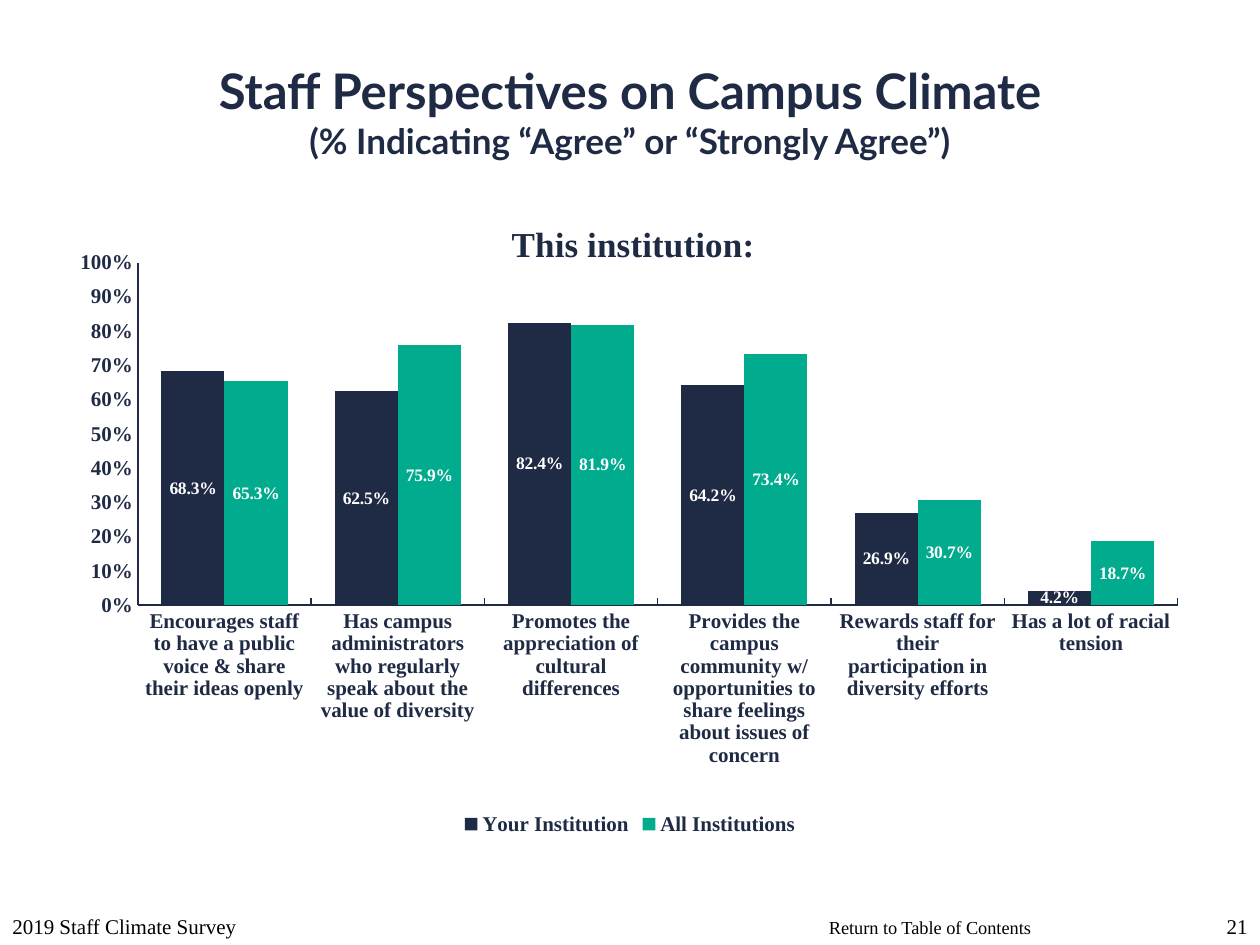
from dataclasses import dataclass

from lxml.etree import SubElement
from pptx import Presentation
from pptx.chart.data import CategoryChartData
from pptx.dml.color import RGBColor
from pptx.enum.chart import (XL_CHART_TYPE, XL_LABEL_POSITION,
                             XL_LEGEND_POSITION, XL_TICK_MARK)
from pptx.enum.text import MSO_ANCHOR, PP_ALIGN
from pptx.oxml import parse_xml
from pptx.oxml.ns import nsdecls, qn
from pptx.util import Cm, Pt


@dataclass(frozen=True)
class Theme:
    navy: RGBColor = RGBColor(0x1F, 0x2A, 0x44)
    green: RGBColor = RGBColor(0x00, 0xAB, 0x8E)
    white: RGBColor = RGBColor(0xFF, 0xFF, 0xFF)
    black: RGBColor = RGBColor(0x00, 0x00, 0x00)
    heading_face: str = "Lato"
    body_face: str = "Times New Roman"
    heading: float = 28
    subheading: float = 20
    chart_title: float = 20
    axis: float = 12
    label: float = 10
    footer: float = 12
    link: float = 10.5


THEME = Theme()

STATEMENTS = {
    "Encourages staff to have a public voice & share their ideas openly": (0.683, 0.653),
    "Has campus administrators who regularly speak about the value of diversity": (0.625, 0.759),
    "Promotes the appreciation of cultural differences": (0.824, 0.819),
    "Provides the campus community w/ opportunities to share feelings about issues of concern": (0.642, 0.734),
    "Rewards staff for their participation in diversity efforts": (0.269, 0.307),
    "Has a lot of racial tension": (0.042, 0.187),
}
GROUPS = {"Your Institution": THEME.navy, "All Institutions": THEME.green}


def style_font(font, size, color=THEME.navy, face=THEME.body_face, bold=True):
    font.name, font.size, font.bold = face, Pt(size), bold
    font.color.rgb = color


def add_run(paragraph, text, size, **style):
    run = paragraph.add_run()
    run.text = text
    style_font(run.font, size, **style)


def add_title(slide, heading, subheading):
    title = slide.shapes.title
    title.left, title.top, title.width, title.height = Cm(0), Cm(0.64), Cm(25.4), Cm(3.18)
    title.text_frame.vertical_anchor = MSO_ANCHOR.MIDDLE
    paragraph = title.text_frame.paragraphs[0]
    paragraph.alignment = PP_ALIGN.CENTER
    add_run(paragraph, heading, THEME.heading, face=THEME.heading_face)
    paragraph.add_line_break()
    add_run(paragraph, subheading, THEME.subheading, face=THEME.heading_face)


def add_footer(slide, text, left, top, width, height, size=THEME.footer,
               align=PP_ALIGN.LEFT, anchor=MSO_ANCHOR.BOTTOM, wrap=True):
    frame = slide.shapes.add_textbox(Cm(left), Cm(top), Cm(width), Cm(height)).text_frame
    frame.word_wrap = wrap
    frame.vertical_anchor = anchor
    paragraph = frame.paragraphs[0]
    paragraph.alignment = align
    add_run(paragraph, text, size, color=THEME.black, bold=False)


def place_in_chart(part, index, **values):
    """Give a chart part a manual layout, in fractions of the chart area."""
    for old in part.findall(qn("c:layout")):
        part.remove(old)
    layout = parse_xml(f"<c:layout {nsdecls('c')}><c:manualLayout/></c:layout>")
    for name, value in values.items():
        SubElement(layout[0], qn(f"c:{name}")).set("val", str(value))
    part.insert(index, layout)


def style_axis(axis, tick):
    axis.has_major_gridlines = False
    axis.major_tick_mark = tick
    axis.minor_tick_mark = XL_TICK_MARK.NONE
    axis.format.line.color.rgb = THEME.navy
    axis.format.line.width = Pt(0.75)
    style_font(axis.tick_labels.font, THEME.axis)


def style_series(series, color):
    series.format.fill.solid()
    series.format.fill.fore_color.rgb = color
    labels = series.data_labels
    labels.show_value = True
    labels.position = XL_LABEL_POSITION.CENTER
    labels.number_format = "0.0%"
    labels.number_format_is_linked = False
    style_font(labels.font, THEME.label, color=THEME.white)


def add_climate_chart(slide):
    data = CategoryChartData(number_format="0.0%")
    data.categories = list(STATEMENTS)
    for group, shares in zip(GROUPS, zip(*STATEMENTS.values())):
        data.add_series(group, shares)
    chart = slide.shapes.add_chart(XL_CHART_TYPE.COLUMN_CLUSTERED, Cm(1.27), Cm(3.81),
                                   Cm(22.86), Cm(13.13), data).chart
    style_font(chart.font, THEME.label)

    chart.has_title = True
    add_run(chart.chart_title.text_frame.paragraphs[0], "This institution:", THEME.chart_title)
    place_in_chart(chart.chart_title._element, 1, xMode="edge", yMode="edge", x=0.39, y=0.04)
    place_in_chart(chart._chartSpace.chart.plotArea, 0, layoutTarget="inner",
                   xMode="edge", yMode="edge", x=0.066, y=0.113, w=0.917, h=0.526)

    chart.has_legend = True
    chart.legend.position = XL_LEGEND_POSITION.BOTTOM
    chart.legend.include_in_layout = False
    style_font(chart.legend.font, THEME.axis)

    style_axis(chart.category_axis, XL_TICK_MARK.INSIDE)
    shares_axis = chart.value_axis
    style_axis(shares_axis, XL_TICK_MARK.NONE)
    shares_axis.minimum_scale, shares_axis.maximum_scale = 0, 1
    shares_axis.major_unit = 0.1
    shares_axis.tick_labels.number_format = "0%"
    shares_axis.tick_labels.number_format_is_linked = False

    columns = chart.plots[0]
    columns.gap_width, columns.overlap = 75, 0
    columns.vary_by_categories = False
    for series, color in zip(columns.series, GROUPS.values()):
        style_series(series, color)


def main():
    deck = Presentation()
    deck.slide_width, deck.slide_height = Cm(25.4), Cm(19.05)
    slide = deck.slides.add_slide(deck.slide_layouts[5])
    add_title(slide, "Staff Perspectives on Campus Climate",
              "(% Indicating “Agree” or “Strongly Agree”)")
    add_climate_chart(slide)
    add_footer(slide, "Return to Table of Contents", 16.46, 18.34, 4.62, 0.71,
               size=THEME.link, anchor=MSO_ANCHOR.TOP, wrap=False)
    add_footer(slide, "2019 Staff Climate Survey", 0, 17.78, 8.05, 1.27)
    add_footer(slide, "21", 24.13, 17.78, 1.27, 1.27, align=PP_ALIGN.RIGHT)
    deck.save("out.pptx")


if __name__ == "__main__":
    main()
